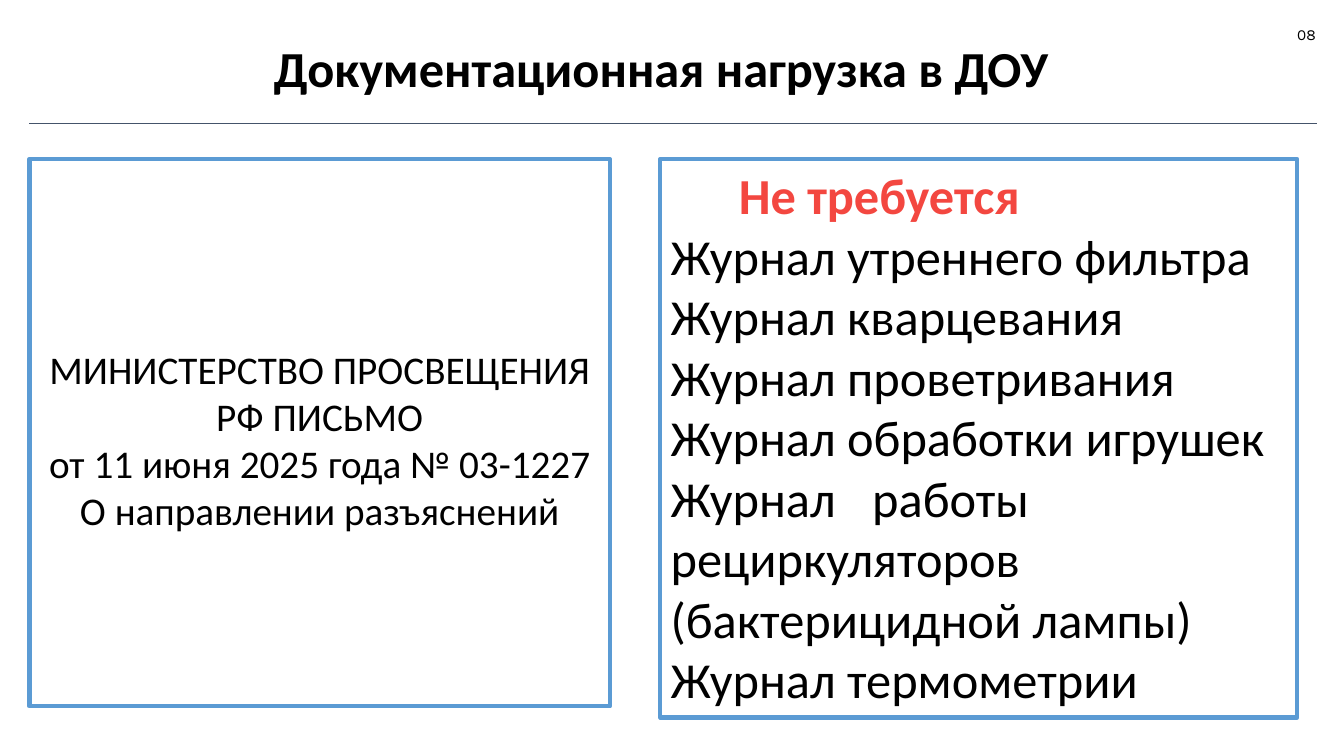
"""Build the slide on paperwork that kindergartens no longer need to keep."""
from lxml import etree
from pptx import Presentation
from pptx import util as u
from pptx.dml.color import RGBColor
from pptx.enum import shapes, text
from pptx.oxml.ns import qn

COLOURS = {"ink": "000000", "alert": "F34740", "frame": "5B9BD4", "rule": "44536A"}
LETTER = [
    "МИНИСТЕРСТВО ПРОСВЕЩЕНИЯ РФ ПИСЬМО",
    "от 11 июня 2025 года № 03-1227",
    "О направлении разъяснений",
]
JOURNALS = [
    "Журнал утреннего фильтра",
    "Журнал кварцевания",
    "Журнал проветривания",
    "Журнал обработки игрушек",
    "Журнал\tработы рециркуляторов (бактерицидной лампы)",
    "Журнал термометрии",
]
LEFT, ALIGN, ANCHOR = text.PP_ALIGN.LEFT, text.PP_ALIGN, text.MSO_ANCHOR


def colour(name):
    return RGBColor.from_string(COLOURS[name])


def set_values(target, values):
    for name, value in values.items():
        setattr(target, name, value)


def place(box, left, top, width, height):
    sides = {"left": left, "top": top, "width": width, "height": height}
    set_values(box, {side: u.Cm(length) for side, length in sides.items()})


def set_frame(box, anchor, left=0, top=0, right=0, wrap=True):
    set_values(box.text_frame, {
        "auto_size": text.MSO_AUTO_SIZE.NONE, "word_wrap": wrap,
        "vertical_anchor": anchor, "margin_left": u.Cm(left),
        "margin_top": u.Cm(top), "margin_right": u.Cm(right), "margin_bottom": 0,
    })


def draw_line(line, name, width):
    line.color.rgb = colour(name)
    line.width = u.Pt(width)


def write(para, words, size, align=LEFT, ink="ink", font="Calibri", bold=False,
          indent=0, tab=None):
    props = para._p.get_or_add_pPr()
    props.set("marL", str(u.Cm(indent)))
    props.set("indent", "0")
    etree.SubElement(props, qn("a:buNone"))
    if tab:
        stops = etree.SubElement(props, qn("a:tabLst"))
        etree.SubElement(stops, qn("a:tab"), pos=str(u.Cm(tab)), algn="l")
    set_values(para, {"alignment": align, "space_before": u.Pt(0)})
    span = para.add_run()
    span.text = words
    set_values(span.font, {"name": font, "size": u.Pt(size), "bold": bold})
    span.font.color.rgb = colour(ink)


def write_list(box, lines, size, **style):
    for words in lines:
        first = box.text_frame.paragraphs[0]
        para = box.text_frame.add_paragraph() if first.runs else first
        write(para, words, size, **style)


def add_rule(page, left, top, right):
    rule = page.shapes.add_connector(
        shapes.MSO_CONNECTOR.STRAIGHT, u.Cm(left), u.Cm(top), u.Cm(right), u.Cm(top))
    draw_line(rule.line, "rule", 0.48)
    etree.SubElement(rule._element.spPr, qn("a:effectLst"))


def add_page_number(page, number):
    box = page.shapes.add_textbox(u.Cm(32.69), u.Cm(0.61), u.Cm(0.51), u.Cm(0.53))
    set_frame(box, ANCHOR.TOP, top=0.03, wrap=False)
    write(box.text_frame.paragraphs[0], number, 11, font="Karla")


def add_letter(page):
    box = page.shapes.add_shape(
        shapes.MSO_SHAPE.RECTANGLE, u.Cm(0.74), u.Cm(4.01), u.Cm(14.63), u.Cm(13.79))
    box.shadow.inherit = False
    box.fill.background()
    draw_line(box.line, "frame", 3.12)
    set_frame(box, ANCHOR.MIDDLE, left=0.48, top=0.35, right=0.48)
    write_list(box, LETTER, 28, align=ALIGN.CENTER)


def fill_title(box):
    place(box, 5.33, 0.41, 23.44, 2.77)
    set_frame(box, ANCHOR.TOP, top=0.53)
    write(box.text_frame.paragraphs[0], "Документационная нагрузка в ДОУ", 36,
          bold=True, indent=1.57)


def fill_journals(box):
    place(box, 16.64, 4.01, 16.05, 14.07)
    draw_line(box.line, "frame", 3.12)
    set_frame(box, ANCHOR.TOP, left=0.23, top=0.13, right=0.2)
    write(box.text_frame.paragraphs[0], "Не требуется", 36,
          ink="alert", bold=True, indent=1.75)
    write_list(box, JOURNALS, 36, indent=0.03, tab=11.63)


def main():
    deck = Presentation()
    set_values(deck, {"slide_width": u.Cm(33.87), "slide_height": u.Cm(19.05)})
    page = deck.slides.add_slide(deck.slide_layouts[1])
    fill_title(page.shapes.title)
    fill_journals(page.placeholders[1])
    add_rule(page, 0.74, 3.12, 33.2)
    add_page_number(page, "08")
    add_letter(page)
    deck.save("out.pptx")


if __name__ == "__main__":
    main()
